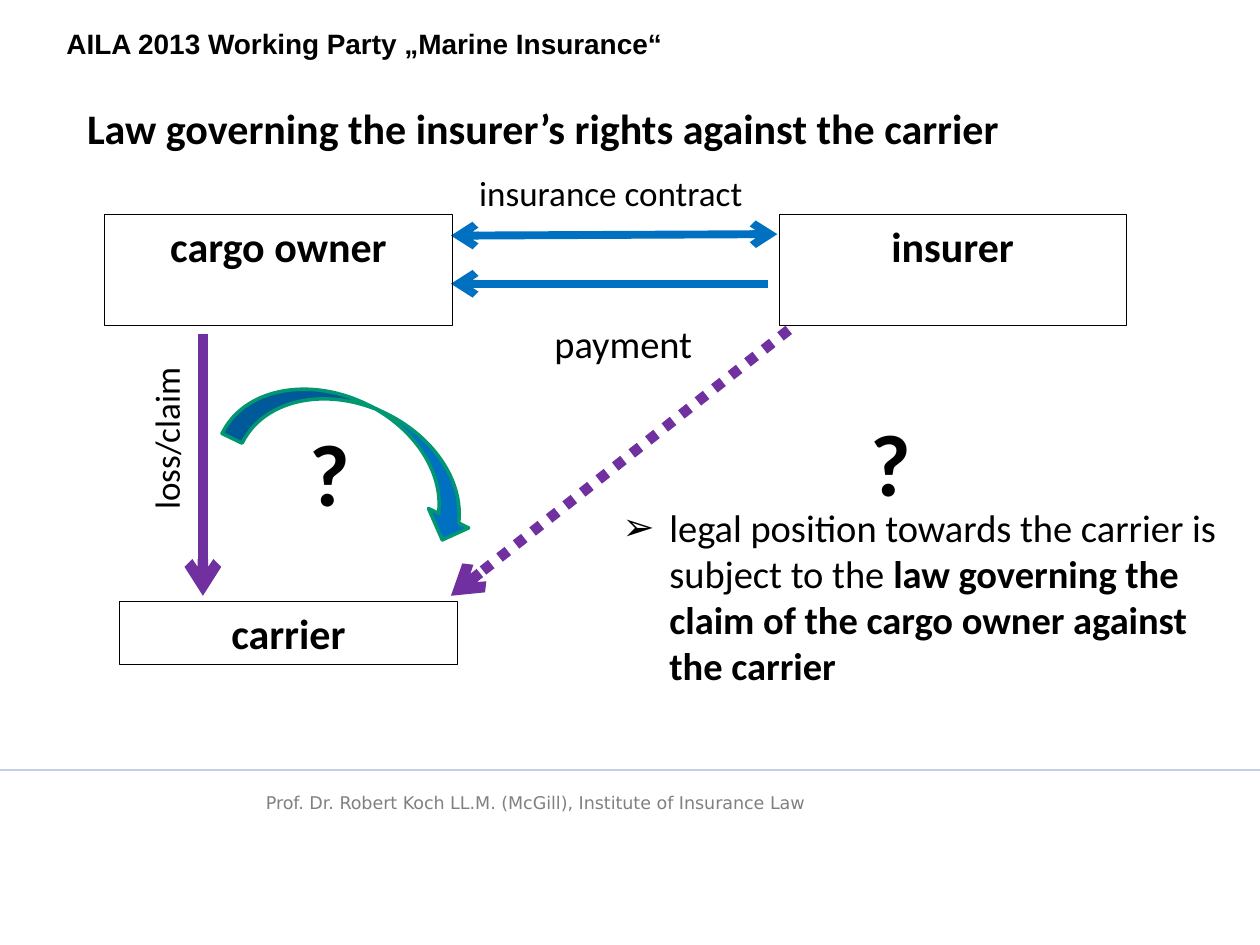
import dataclasses
import typing

import lxml.etree
import pptx
import pptx.dml.color
import pptx.enum.dml
import pptx.enum.shapes
import pptx.enum.text
import pptx.oxml.ns
import pptx.util

COLOURS = {
    "text": "000000",
    "footer": "808080",
    "rule": "C2CFE7",
    "contract": "0070C0",
    "claim": "7030A0",
    "outline": "009771",
}
ALIGN = pptx.enum.text.PP_ALIGN
SHAPES = pptx.enum.shapes.MSO_SHAPE
Area = tuple[float, float, float, float]


@dataclasses.dataclass
class Label:
    text: str
    area: Area
    size: float
    bold: bool = False
    font: str = "Calibri"
    colour: str = "text"
    align: typing.Any = ALIGN.CENTER
    rotation: float = 0
    framed: bool = False


@dataclasses.dataclass
class Arrow:
    start: tuple[float, float]
    end: tuple[float, float]
    colour: str
    width: float
    ends: tuple[str, ...] = ("tailEnd",)
    dotted: bool = False


LABELS = [
    Label("cargo owner", (2.11, 4.32, 7.01, 2.24), 24, True, framed=True),
    Label("insurer", (15.7, 4.32, 7.01, 2.24), 24, True, framed=True),
    Label("carrier", (2.41, 12.12, 6.81, 1.27), 24, True, framed=True),
    Label("insurance contract ", (8.89, 3.33, 7.01, 1.12), 20),
    Label("payment", (9.86, 6.32, 5.41, 1.19), 22),
    Label("AILA 2013 Working Party „Marine Insurance“", (1.09, 0.41, 16.94, 0.94),
          16, True, "Arial", align=ALIGN.LEFT),
    Label("loss/claim", (-0.15, 8.28, 7.01, 1.12), 20, rotation=270),
    Label("?", (1.19, 8.33, 10.9, 2.39), 50, True),
    Label("?", (12.5, 8.13, 10.9, 2.39), 50, True),
    Label("Prof. Dr. Robert Koch LL.M. (McGill), Institute of Insurance Law",
          (5.11, 15.85, 17.81, 0.69), 10, False, "DejaVu Sans", "footer", ALIGN.LEFT),
]
ARROWS = [
    Arrow((0, 15.52), (25.4, 15.52), "rule", 0.75, ()),
    Arrow((9.09, 4.75), (15.67, 4.72), "contract", 4.5, ("headEnd", "tailEnd")),
    Arrow((15.49, 5.72), (9.09, 5.72), "contract", 4.5),
    Arrow((4.09, 6.73), (4.09, 12.01), "claim", 6),
    Arrow((15.9, 6.65), (9.09, 12.01), "claim", 6, dotted=True),
]


def colour_of(name: str) -> pptx.dml.color.RGBColor:
    return pptx.dml.color.RGBColor.from_string(COLOURS[name])


def lengths(values: typing.Iterable[float]) -> list[pptx.util.Cm]:
    return [pptx.util.Cm(value) for value in values]


def apply(target: typing.Any, values: dict[str, typing.Any]) -> None:
    for name, value in values.items():
        setattr(target, name, value)


def add_tag(parent: typing.Any, tag: str, **attributes: str) -> None:
    lxml.etree.SubElement(parent, pptx.oxml.ns.qn(tag), attributes)


def write(box: typing.Any, label: Label, pieces: list[tuple[str, bool]]) -> typing.Any:
    frame = box.text_frame
    apply(frame, {
        "word_wrap": True,
        "auto_size": pptx.enum.text.MSO_AUTO_SIZE.NONE,
        "vertical_anchor": pptx.enum.text.MSO_ANCHOR.TOP,
    })
    para = frame.paragraphs[0]
    apply(para, {"alignment": label.align, "space_before": pptx.util.Pt(0)})
    for text, bold in pieces:
        span = para.add_run()
        span.text = text
        apply(span.font, {"name": label.font, "size": pptx.util.Pt(label.size), "bold": bold})
        span.font.color.rgb = colour_of(label.colour)
    return para


def draw_label(page: typing.Any, label: Label) -> None:
    if label.framed:
        box = page.shapes.add_shape(SHAPES.RECTANGLE, *lengths(label.area))
        box.shadow.inherit = False
        box.fill.background()
        box.line.color.rgb = colour_of("text")
        box.line.width = pptx.util.Pt(0.25)
    else:
        box = page.shapes.add_textbox(*lengths(label.area))
    box.rotation = label.rotation
    write(box, label, [(label.text, label.bold)])


def fill_placeholder(box: typing.Any, label: Label, pieces: list[tuple[str, bool]]) -> typing.Any:
    apply(box, dict(zip(("left", "top", "width", "height"), lengths(label.area))))
    return write(box, label, pieces)


def draw_arrow(page: typing.Any, arrow: Arrow) -> None:
    line = page.shapes.add_connector(
        pptx.enum.shapes.MSO_CONNECTOR.STRAIGHT, *lengths(arrow.start + arrow.end))
    line.line.color.rgb = colour_of(arrow.colour)
    line.line.width = pptx.util.Pt(arrow.width)
    if arrow.dotted:
        line.line.dash_style = pptx.enum.dml.MSO_LINE.ROUND_DOT
    properties = line._element.spPr
    for end in arrow.ends:
        add_tag(properties.find(pptx.oxml.ns.qn("a:ln")), f"a:{end}", type="arrow")
    add_tag(properties, "a:effectLst")


def draw_curved_arrow(page: typing.Any) -> None:
    curve = page.shapes.add_shape(SHAPES.CURVED_DOWN_ARROW, *lengths((4.6, 8.2, 5.38, 1.8)))
    curve.shadow.inherit = False
    curve.rotation = 25.8
    curve.fill.solid()
    curve.fill.fore_color.rgb = colour_of("contract")
    curve.line.color.rgb = colour_of("outline")
    curve.line.width = pptx.util.Pt(2)


def main() -> None:
    deck = pptx.Presentation()
    apply(deck, {"slide_width": pptx.util.Cm(25.4), "slide_height": pptx.util.Cm(19.05)})
    page = deck.slides.add_slide(deck.slide_layouts[1])

    title = Label("Law governing the insurer’s rights against the carrier",
                  (1.5, 1.93, 24.21, 1.27), 24, True, align=ALIGN.LEFT)
    fill_placeholder(page.shapes.title, title, [(title.text, title.bold)])

    body = Label("", (12.29, 10.03, 13.11, 5.71), 22, align=ALIGN.LEFT)
    para = fill_placeholder(page.placeholders[1], body, [
        ("legal position towards the carrier is subject to the ", False),
        ("law governing the claim of the cargo owner against the carrier", True),
    ])
    properties = para._p.get_or_add_pPr()
    indent = pptx.util.Cm(0.95)
    properties.set("marL", str(indent))
    properties.set("indent", str(-indent))
    add_tag(properties, "a:buChar", char="➢")

    for arrow in ARROWS:
        draw_arrow(page, arrow)
    draw_curved_arrow(page)
    for label in LABELS:
        draw_label(page, label)
    deck.save("out.pptx")


if __name__ == "__main__":
    main()
